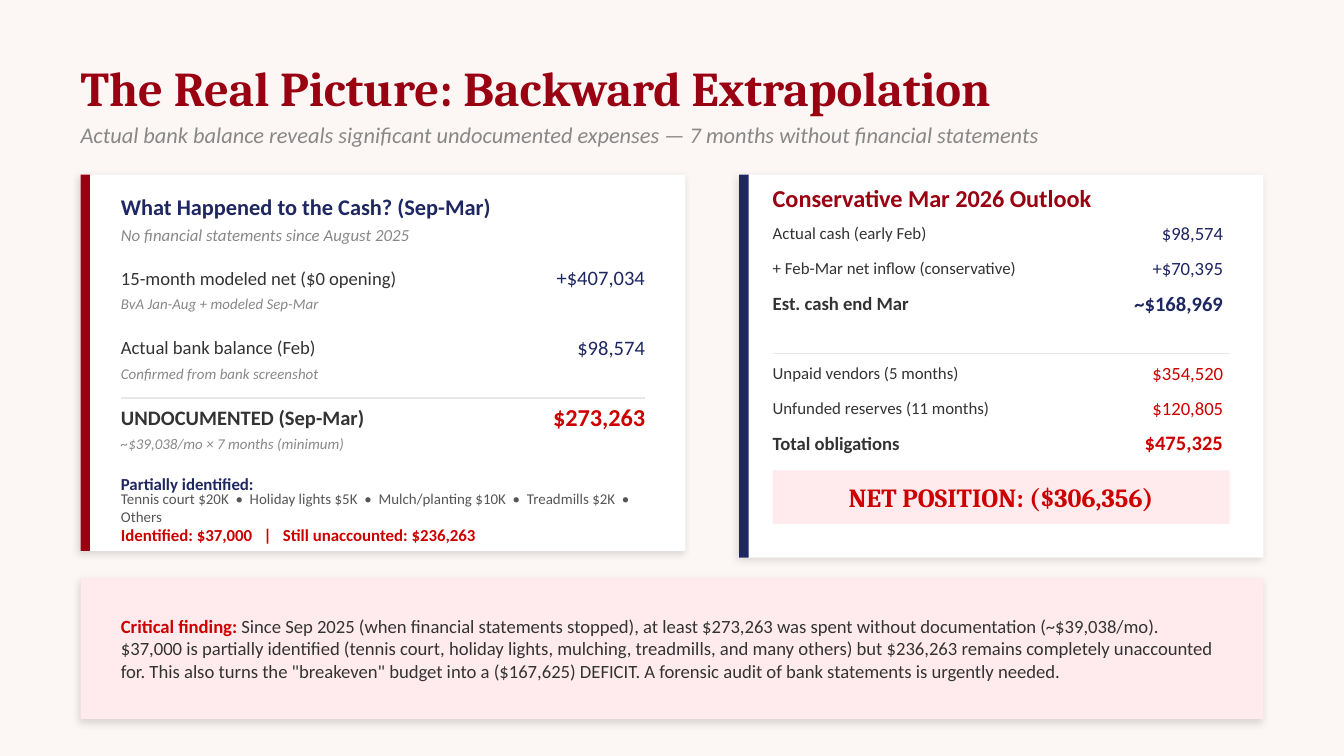
from lxml.etree import SubElement
from pptx import Presentation
from pptx.dml.color import RGBColor
from pptx.enum.shapes import MSO_CONNECTOR as CONNECTOR, MSO_SHAPE as SHAPE
from pptx.enum.text import MSO_ANCHOR as ANCHOR, PP_ALIGN as ALIGN
from pptx.oxml.ns import qn
from pptx.util import Pt

PX = 9144  # EMU per px, 100 px to the inch

COLORS = {
    "paper": "FCF6F5", "white": "FFFFFF", "blush": "FFEBEE", "rule": "E8E8E8",
    "crimson": "990011", "navy": "1E2761", "red": "CC0000",
    "ink": "333333", "soft": "555555", "gray": "888888", "black": "000000",
}


def rgb(name):
    return RGBColor.from_string(COLORS[name])


def add_run(p, text, size=10, color="ink", font="Calibri", bold=False, italic=False):
    r = p.add_run()
    r.text = text
    r.font.name, r.font.size = font, Pt(size)
    r.font.bold, r.font.italic = bold, italic
    r.font.color.rgb = rgb(color)


class Deck:
    def __init__(self):
        self.prs = Presentation()
        self.prs.slide_width = 1000 * PX
        self.prs.slide_height = self.prs.slide_width * 9 // 16
        self.s = self.prs.slides.add_slide(self.prs.slide_layouts[6])
        self.s.background.fill.solid()
        self.s.background.fill.fore_color.rgb = rgb("paper")

    def rect(self, x, y, w, h, color, shadow=False):
        sp = self.s.shapes.add_shape(SHAPE.RECTANGLE, x * PX, y * PX, w * PX, h * PX)
        sp.fill.solid()
        sp.fill.fore_color.rgb = rgb(color)
        sp.line.fill.background()
        sp.shadow.inherit = False
        if shadow:
            effects = sp.element.spPr.find(qn("a:effectLst"))
            outer = SubElement(effects, qn("a:outerShdw"), blurRad=str(Pt(4)),
                               dist=str(Pt(2)), dir=str(135 * 60000),
                               algn="bl", rotWithShape="0")
            clr = SubElement(outer, qn("a:srgbClr"), val=COLORS["black"])
            SubElement(clr, qn("a:alpha"), val="12000")

    def card(self, x, y, w, h, accent):
        self.rect(x, y, w, h, "white", shadow=True)
        self.rect(x, y, 7, h, accent)

    def runs(self, x, y, w, h, runs, align=ALIGN.LEFT):
        """Add a text box from (text, format) pairs."""
        tf = self.s.shapes.add_textbox(x * PX, y * PX, w * PX, h * PX).text_frame
        tf.word_wrap = True
        tf.vertical_anchor = ANCHOR.MIDDLE
        tf.margin_left = tf.margin_right = tf.margin_top = tf.margin_bottom = 0
        p = tf.paragraphs[0]
        p.alignment = align
        for text, style in runs:
            add_run(p, text, **style)

    def text(self, x, y, w, h, text, align=ALIGN.LEFT, **style):
        self.runs(x, y, w, h, [(text, style)], align)

    def rule(self, x, y, w, weight):
        c = self.s.shapes.add_connector(CONNECTOR.STRAIGHT, x * PX, y * PX,
                                        (x + w) * PX, y * PX)
        c.line.color.rgb = rgb("rule")
        c.line.width = Pt(weight)
        SubElement(c.element.spPr, qn("a:effectLst"))


def cash_card(d):
    x, w = 90, 390
    d.card(60, 130, 450, 280, "crimson")
    d.text(x, 140, w, 28, "What Happened to the Cash? (Sep-Mar)", size=12, color="navy", bold=True)
    d.text(x, 165, w, 20, "No financial statements since August 2025", size=9, color="gray", italic=True)
    rows = [
        ("15-month modeled net ($0 opening)", "+$407,034", "BvA Jan-Aug + modeled Sep-Mar", False),
        ("Actual bank balance (Feb)", "$98,574", "Confirmed from bank screenshot", False),
        ("UNDOCUMENTED (Sep-Mar)", "$273,263", "~$39,038/mo × 7 months (minimum)", True),
    ]
    for i, (label, value, note, total) in enumerate(rows):
        y = 194 + 52 * i
        if total:
            d.rule(x, y - 2, w, 0.8)
        d.text(x, y, 230, 25, label, size=11 if total else 10, bold=total)
        d.text(300, y, 180, 25, value, ALIGN.RIGHT, size=13 if total else 11,
               color="red" if total else "navy", bold=total)
        d.text(x, y + 23, w, 18, note, size=8, color="gray", italic=True)
    d.text(x, 350, 180, 20, "Partially identified:", size=9, color="navy", bold=True)
    items = ["Tennis court $20K", "Holiday lights $5K", "Mulch/planting $10K", "Treadmills $2K", "Others"]
    d.text(x, 368, w, 20, "  •  ".join(items), size=8, color="soft")
    d.text(x, 388, w, 20, "Identified: $37,000   |   Still unaccounted: $236,263",
           size=9, color="red", bold=True)


def outlook_card(d):
    x, w = 575, 340
    d.card(550, 130, 390, 285, "navy")
    d.text(x, 135, w, 25, "Conservative Mar 2026 Outlook", size=13, color="crimson", bold=True)
    groups = [
        (162, "navy", [("Actual cash (early Feb)", "$98,574"),
                       ("+ Feb-Mar net inflow (conservative)", "+$70,395"),
                       ("Est. cash end Mar", "~$168,969")]),
        (266, "red", [("Unpaid vendors (5 months)", "$354,520"),
                      ("Unfunded reserves (11 months)", "$120,805"),
                      ("Total obligations", "$475,325")]),
    ]
    d.rule(x, 263, w, 0.5)
    for top, color, rows in groups:
        for i, (label, value) in enumerate(rows):
            y, total = top + 26 * i, i == len(rows) - 1
            d.text(x, y, 200, 23, label, size=10 if total else 9, bold=total)
            d.text(740, y, 170, 23, value, ALIGN.RIGHT, size=11 if total else 10,
                   color=color, bold=total)
    d.rect(x, 350, w, 40, "blush")
    d.text(x, 350, w, 40, "NET POSITION: ($306,356)", ALIGN.CENTER,
           size=14, color="red", font="Cambria", bold=True)


def main():
    d = Deck()
    d.text(60, 30, 880, 70, "The Real Picture: Backward Extrapolation",
           size=26, color="crimson", font="Cambria", bold=True)
    d.text(60, 85, 880, 30, "Actual bank balance reveals significant undocumented expenses"
           " — 7 months without financial statements", size=12, color="gray", italic=True)
    cash_card(d)
    outlook_card(d)
    d.rect(60, 430, 880, 105, "blush", shadow=True)
    finding = (
        "Since Sep 2025 (when financial statements stopped), at least $273,263 was spent "
        "without documentation (~$39,038/mo). $37,000 is partially identified (tennis court, "
        "holiday lights, mulching, treadmills, and many others) but $236,263 remains completely "
        'unaccounted for. This also turns the "breakeven" budget into a ($167,625) DEFICIT. '
        "A forensic audit of bank statements is urgently needed."
    )
    d.runs(90, 435, 820, 95, [("Critical finding: ", {"color": "red", "bold": True}), (finding, {})])
    d.prs.save("out.pptx")


if __name__ == "__main__":
    main()
